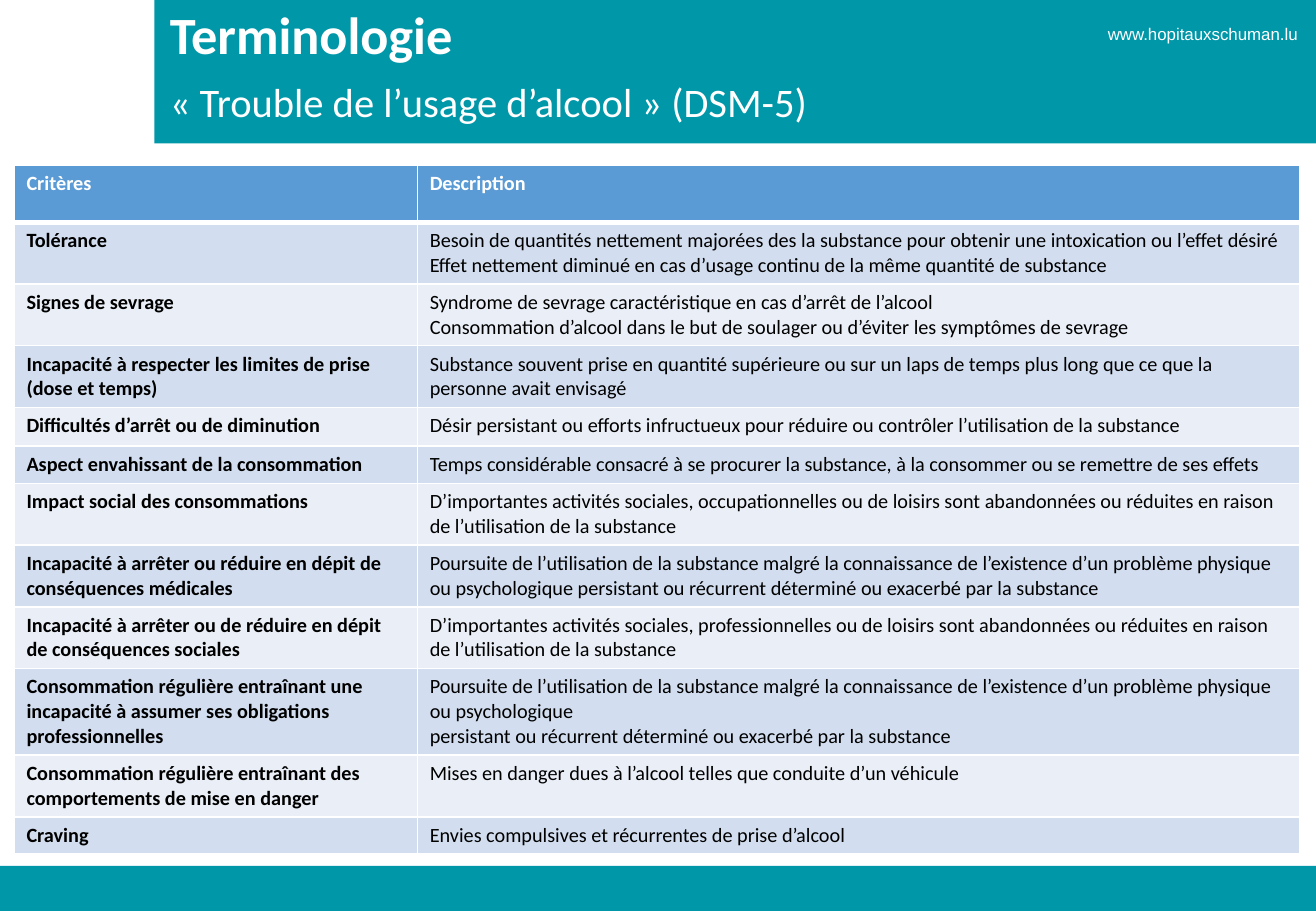
from lxml.etree import SubElement as Sub
from pptx import Presentation as Deck
from pptx.dml.color import RGBColor as Color
from pptx.enum.shapes import MSO_SHAPE as Kind
from pptx.enum.text import MSO_ANCHOR as Anchor
from pptx.oxml.ns import qn
from pptx.util import Cm, Pt

TEAL, WHITE, BLACK = "0097A9", "FFFFFF", "000000"
HEAD, BANDS = "5B9BD5", ("EAEFF7", "D2DEEF")
ONE, TWO, THREE = 0.78, 1.29, 1.81
SITE = "www.hopitauxschuman.lu"

ROWS = [
    (1.2, "Critères", "Description"),
    (TWO, "Tolérance",
     "Besoin de quantités nettement majorées des la substance pour obtenir une intoxication ou l’effet désiré\n"
     "Effet nettement diminué en cas d’usage continu de la même quantité de substance"),
    (TWO, "Signes de sevrage",
     "Syndrome de sevrage caractéristique en cas d’arrêt de l’alcool\n"
     "Consommation d’alcool dans le but de soulager ou d’éviter les symptômes de sevrage"),
    (TWO, "Incapacité à respecter les limites de prise (dose et temps)",
     "Substance souvent prise en quantité supérieure ou sur un laps de temps plus long que ce que la "
     "personne avait envisagé"),
    (0.81, "Difficultés d’arrêt ou de diminution",
     "Désir persistant ou efforts infructueux pour réduire ou contrôler l’utilisation de la substance"),
    (ONE, "Aspect envahissant de la consommation",
     "Temps considérable consacré à se procurer la substance, à la consommer ou se remettre de ses effets"),
    (TWO, "Impact social des consommations",
     "D’importantes activités sociales, occupationnelles ou de loisirs sont abandonnées ou réduites en raison "
     "de l’utilisation de la substance"),
    (TWO, "Incapacité à arrêter ou réduire en dépit de conséquences médicales",
     "Poursuite de l’utilisation de la substance malgré la connaissance de l’existence d’un problème physique "
     "ou psychologique persistant ou récurrent déterminé ou exacerbé par la substance"),
    (TWO, "Incapacité à arrêter ou de réduire en dépit de conséquences sociales",
     "D’importantes activités sociales, professionnelles ou de loisirs sont abandonnées ou réduites en raison "
     "de l’utilisation de la substance"),
    (THREE, "Consommation régulière entraînant une incapacité à assumer ses obligations professionnelles",
     "Poursuite de l’utilisation de la substance malgré la connaissance de l’existence d’un problème physique "
     "ou psychologique\n"
     "persistant ou récurrent déterminé ou exacerbé par la substance"),
    (TWO, "Consommation régulière entraînant des comportements de mise en danger",
     "Mises en danger dues à l’alcool telles que conduite d’un véhicule"),
    (ONE, "Craving", "Envies compulsives et récurrentes de prise d’alcool"),
]


def tint(code):
    """Turn a hex string into a colour."""
    return Color.from_string(code)


def write(frame, text, size=12, color=BLACK, bold=False, font="Calibri", lead=None):
    """Fill a text frame, one paragraph per line."""
    frame.text = text
    for para in frame.paragraphs:
        if lead:
            para.line_spacing = lead
        face = para.font
        face.name, face.size, face.bold = font, Pt(size), bold
        face.color.rgb = tint(color)


def edge(cell, side, width):
    """Draw one white border of a cell."""
    line = Sub(cell._tc.get_or_add_tcPr(), qn(f"a:ln{side}"), w=str(Pt(width)))
    Sub(Sub(line, qn("a:solidFill")), qn("a:srgbClr"), val=WHITE)


class Page:
    """Hold the style and the current slide."""

    def __init__(self, deck):
        """Add a blank slide."""
        self.slide = deck.slides.add_slide(deck.slide_layouts[6])
        self.shapes = self.slide.shapes

    def bar(self, *box):
        """Add a plain teal band."""
        bar = self.shapes.add_shape(Kind.RECTANGLE, *map(Cm, box))
        bar.shadow.inherit = False
        bar.fill.solid()
        bar.fill.fore_color.rgb = tint(TEAL)
        bar.line.fill.background()

    def label(self, text, *box, anchor=Anchor.TOP, inset=True, wrap=True, **style):
        """Add a white text box."""
        frame = self.shapes.add_textbox(*map(Cm, box)).text_frame
        frame.word_wrap, frame.vertical_anchor = wrap, anchor
        if not inset:
            frame.margin_left = frame.margin_top = frame.margin_bottom = 0
            frame.margin_right = Cm(0.2)
        write(frame, text, color=WHITE, **style)

    def table(self, rows, left, top, wide):
        """Add the banded table with its head row."""
        high = sum(row[0] for row in rows)
        grid = self.shapes.add_table(len(rows), len(wide), Cm(left), Cm(top), Cm(sum(wide)), Cm(high)).table
        for col, width in zip(grid.columns, wide):
            col.width = Cm(width)
        for i, (tall, *texts) in enumerate(rows):
            grid.rows[i].height = Cm(tall)
            for j, text in enumerate(texts):
                cell = grid.cell(i, j)
                for side in "LRTB":
                    thick = (i, side) in ((0, "B"), (1, "T"))
                    edge(cell, side, 3 if thick else 1)
                cell.fill.solid()
                cell.fill.fore_color.rgb = tint(BANDS[i % 2] if i else HEAD)
                write(cell.text_frame, text, color=BLACK if i else WHITE, bold=i == 0 or j == 0)


def main():
    """Build and save the slide."""
    deck = Deck()
    deck.slide_width, deck.slide_height = Cm(27.51), Cm(19.05)
    page = Page(deck)
    page.bar(3.23, 0, 24.28, 3)
    page.bar(0, 18.11, 27.51, 0.94)
    page.label(SITE, 23.16, 0.5, 4.22, 0.43, inset=False, wrap=False, size=10, font="Arial")
    page.label("Terminologie", 3.3, 0, 20.09, 1.5, anchor=Anchor.BOTTOM, size=31, bold=True, lead=0.9)
    page.label("« Trouble de l’usage d’alcool » (DSM-5)", 3.3, 1.6, 23.9, 1, size=24, lead=0.9)
    page.table(ROWS, 0.3, 3.45, (8.43, 18.44))
    deck.save("out.pptx")


if __name__ == "__main__":
    main()
